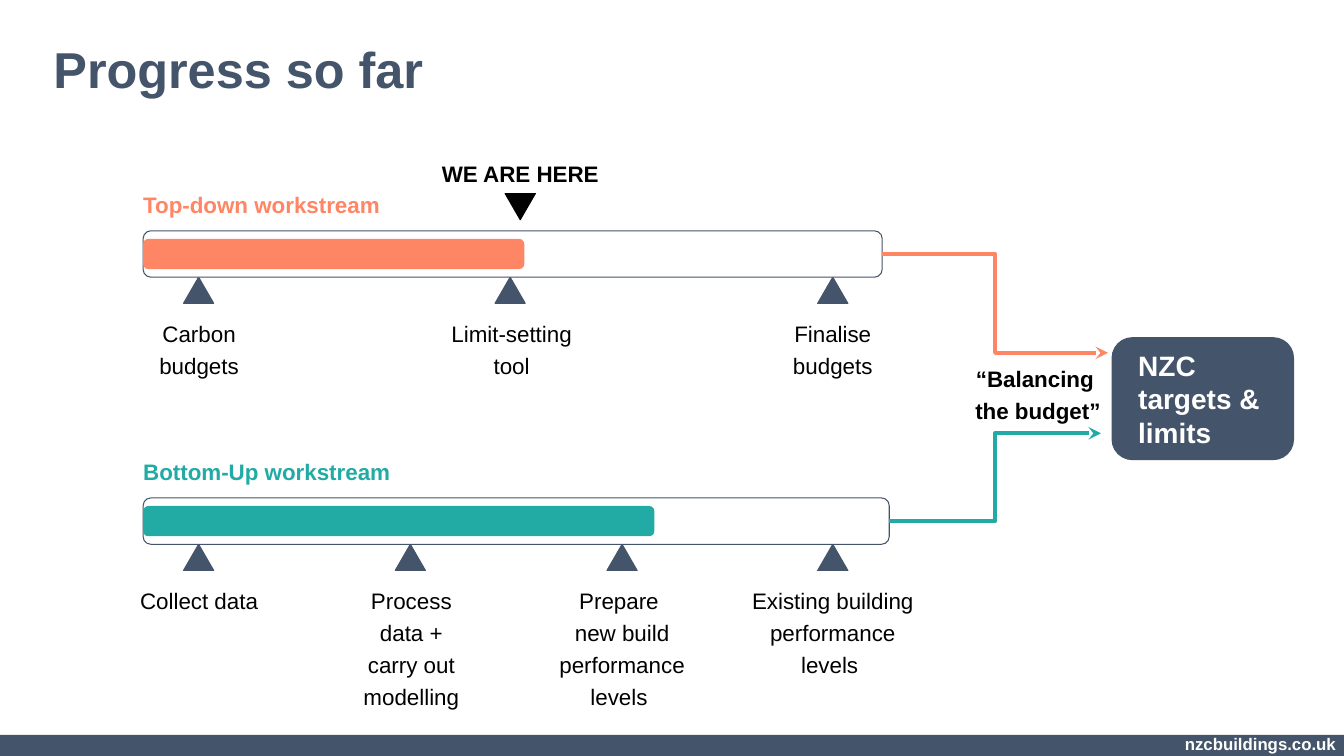
from dataclasses import dataclass

from lxml import etree
from pptx import Presentation
from pptx import util as u
from pptx.dml.color import RGBColor
from pptx.enum import shapes, text
from pptx.oxml import ns

NAVY, CORAL, TEAL = "44546A", "FE8664", "22ABA5"
WHITE, BLACK = "FFFFFF", "000000"
LEFT, MID, RIGHT = text.PP_ALIGN.LEFT, text.PP_ALIGN.CENTER, text.PP_ALIGN.RIGHT
FORM = shapes.MSO_SHAPE
BAR_X, BAR_H, FILL_H = 1.42, 0.46, 0.3
TIP_W, TIP_H = 0.3, 0.26


@dataclass
class Step:
    tip: float  # left edge of the marker
    x: float
    w: float
    label: str


@dataclass
class Stream:
    name: str
    hue: str
    head: float  # top of the heading
    y: float  # top of the track
    w: float
    done: float
    goal: tuple[float, float]  # arrow tip
    steps: list[Step]


STREAMS = [
    Stream("Top-down workstream", CORAL, 1.9, 2.29, 7.33, 3.78, (10.99, 3.5), [
        Step(1.82, 1.31, 1.33, "Carbon budgets"),
        Step(4.91, 4.41, 1.33, "Limit-setting tool"),
        Step(8.11, 7.53, 1.46, "Finalise budgets"),
    ]),
    Stream("Bottom-Up workstream", TEAL, 4.55, 4.94, 7.4, 5.07, (10.92, 4.3), [
        Step(1.82, 1.31, 1.33, "Collect data"),
        Step(3.92, 3.53, 1.1, "Process data + carry out modelling"),
        Step(6.02, 5.24, 1.86, "Prepare \nnew build performance levels "),
        Step(8.11, 7.38, 1.76, "Existing building performance levels "),
    ]),
]

deck = Presentation()
deck.slide_width, deck.slide_height = u.Inches(13.33), u.Inches(7.5)
slide = deck.slides.add_slide(deck.slide_layouts[6])


def paint(fmt, hue: str) -> None:
    """Give a fill a solid colour."""
    fmt.solid()
    fmt.fore_color.rgb = RGBColor.from_string(hue)


def write(frame, lines: list[str], size: int, hue: str, bold: bool = False,
          align=LEFT, gap: float = 1.0, pad=(0, 0, 0, 0)) -> None:
    """Fill a frame, one paragraph per line; a newline is a line break."""
    frame.word_wrap = True
    (frame.margin_left, frame.margin_top,
     frame.margin_right, frame.margin_bottom) = map(u.Inches, pad)
    for i, line in enumerate(lines):
        para = frame.add_paragraph() if i else frame.paragraphs[0]
        para.alignment, para.line_spacing = align, gap
        for j, part in enumerate(line.split("\n")):
            if j:
                para.add_line_break()
            run = para.add_run()
            run.text = part
            run.font.name, run.font.size, run.font.bold = "Arial", u.Pt(size), bold
            run.font.color.rgb = RGBColor.from_string(hue)


def label(x: float, y: float, w: float, h: float, lines: list[str],
          size: int = 16, hue: str = BLACK, **style) -> None:
    box = slide.shapes.add_textbox(*map(u.Inches, (x, y, w, h)))
    write(box.text_frame, lines, size, hue, **style)


def block(form, x: float, y: float, w: float, h: float, hue: str,
          edge: str | None = None):
    item = slide.shapes.add_shape(form, *map(u.Inches, (x, y, w, h)))
    item.shadow.inherit = False
    paint(item.fill, hue)
    if edge:
        paint(item.line.fill, edge)
        item.line.width = u.Pt(0.75)
    else:
        item.line.fill.background()
    return item


def arrow(start: tuple[float, float], end: tuple[float, float], hue: str) -> None:
    link = slide.shapes.add_connector(
        shapes.MSO_CONNECTOR.ELBOW, *map(u.Inches, (*start, *end)))
    paint(link.line.fill, hue)
    link.line.width = u.Pt(3)
    tail = etree.SubElement(link.line._get_or_add_ln(), ns.qn("a:tailEnd"))
    tail.set("type", "stealth")
    etree.SubElement(link._element.spPr, ns.qn("a:effectLst"))


def draw(flow: Stream) -> None:
    """Heading, track, progress, markers with labels, and arrow."""
    label(BAR_X, flow.head, 3.85, 0.34, [flow.name], hue=flow.hue, bold=True)
    for step in flow.steps:
        block(FORM.ISOSCELES_TRIANGLE, step.tip, flow.y + BAR_H,
              TIP_W, TIP_H, NAVY, NAVY)
        label(step.x, flow.y + 0.83, step.w, 0.84, [step.label],
              align=MID, gap=1.2)
    block(FORM.ROUNDED_RECTANGLE, BAR_X, flow.y, flow.w, BAR_H, WHITE, NAVY)
    block(FORM.ROUNDED_RECTANGLE, BAR_X, flow.y + (BAR_H - FILL_H) / 2,
          flow.done, FILL_H, flow.hue)
    arrow((BAR_X + flow.w, flow.y + BAR_H / 2), flow.goal, flow.hue)


# Footer
block(FORM.RECTANGLE, 0, 7.29, 13.33, 0.21, NAVY)
label(6.68, 7.23, 6.67, 0.3, ["nzcbuildings.co.uk"], 12, WHITE, bold=True,
      align=RIGHT, pad=(0.1, 0.05, 0.1, 0.05))

# Title
label(0.53, 0.45, 10.08, 0.84, ["Progress so far"], 36, NAVY, bold=True, gap=0.9)

# Workstreams
for flow in STREAMS:
    draw(flow)

# Shared goal
goal = block(FORM.ROUNDED_RECTANGLE, 11.03, 3.35, 1.8, 1.21, NAVY, NAVY)
goal.text_frame.vertical_anchor = text.MSO_ANCHOR.MIDDLE
write(goal.text_frame, ["NZC targets & limits"], 20, WHITE, bold=True,
      pad=(0.2, 0.1, 0.1, 0.1))
label(9.5, 3.57, 1.59, 0.63, ["“Balancing ", "the budget”"], bold=True,
      align=MID, gap=1.2)

# Current position
here = block(FORM.ISOSCELES_TRIANGLE, 5.01, 1.92, TIP_W, TIP_H, BLACK, BLACK)
here.rotation = 180
label(4.22, 1.54, 1.88, 0.28, ["WE ARE HERE"], bold=True, align=MID, gap=1.2)

deck.save("out.pptx")
